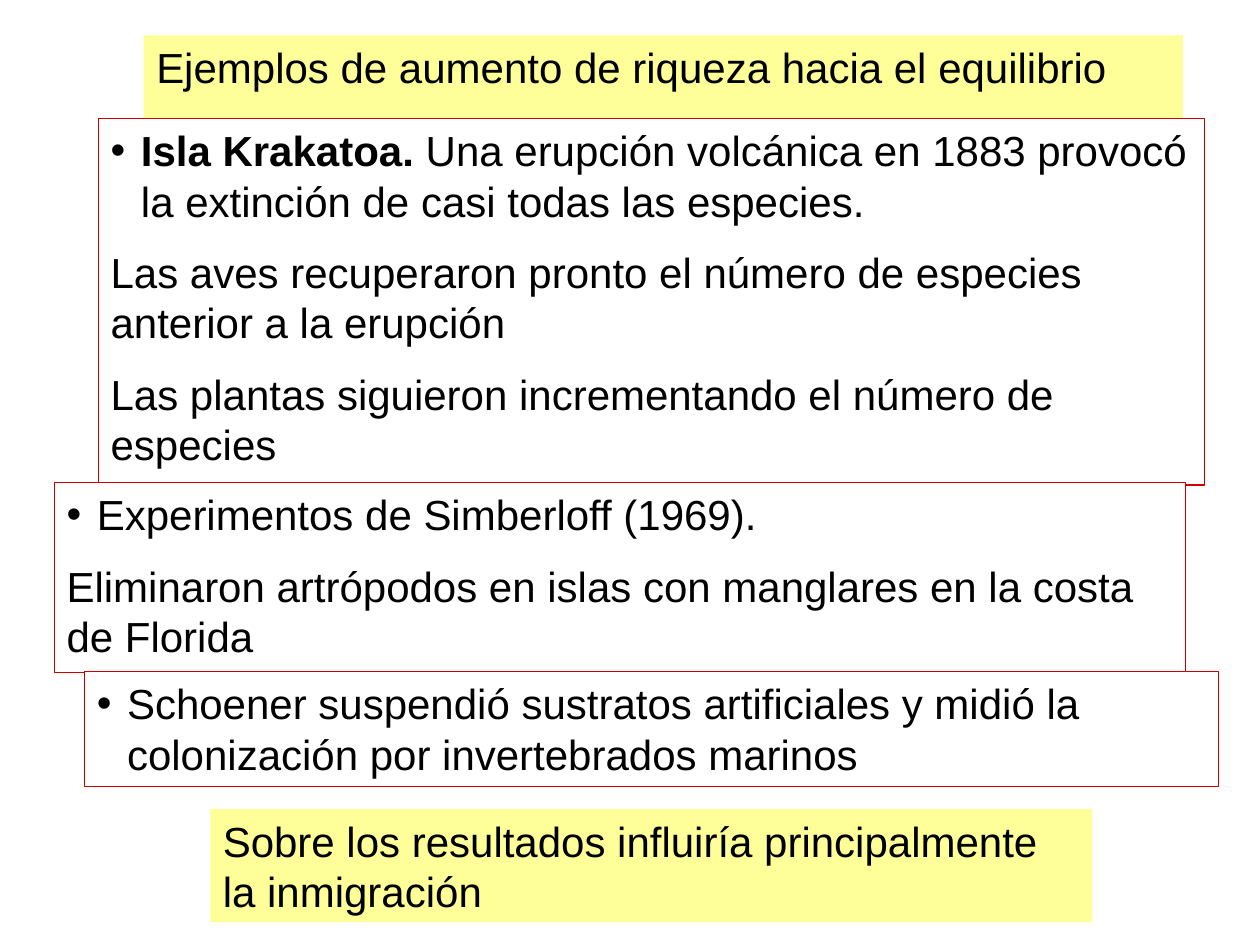
from lxml import etree
from pptx import Presentation
from pptx.dml.color import RGBColor
from pptx.enum.shapes import MSO_SHAPE as SHAPE
from pptx.enum.text import MSO_ANCHOR as ANCHOR, MSO_AUTO_SIZE as AUTO, PP_ALIGN as ALIGN
from pptx.oxml.ns import qn
from pptx.util import Inches, Pt

W, H = 10, 7.5
YELLOW, WHITE, RED, BLACK = "FFFF99", "FFFFFF", "CC0000", "000000"
FONT = {"name": "Arial", "size": Pt(24)}
FRAME = {"word_wrap": True, "auto_size": AUTO.SHAPE_TO_FIT_TEXT,
         "vertical_anchor": ANCHOR.TOP}
BULLET_INDENT = Inches(0.24)


def color(hex_value):
    return RGBColor.from_string(hex_value)


def set_all(obj, values):
    for name, value in values.items():
        setattr(obj, name, value)


def place(sp, box):
    """Position a shape from shares of the slide's size."""
    x, y, w, h = box
    set_all(sp, {"left": Inches(x * W), "top": Inches(y * H),
                 "width": Inches(w * W), "height": Inches(h * H)})


def add_bullet(p):
    pPr = p._p.get_or_add_pPr()
    pPr.set("marL", str(BULLET_INDENT))
    pPr.set("indent", str(-BULLET_INDENT))
    etree.SubElement(pPr, qn("a:buFont")).set("typeface", "Arial")
    etree.SubElement(pPr, qn("a:buChar")).set("char", "•")


def write(sp, paragraphs, bulleted=False):
    """Each paragraph is a list of (text, bold) runs; only the first takes a bullet."""
    tf = sp.text_frame
    set_all(tf, FRAME)
    for i, runs in enumerate(paragraphs):
        p = tf.add_paragraph() if i else tf.paragraphs[0]
        set_all(p, {"alignment": ALIGN.LEFT, "line_spacing": 1.0,
                    "space_before": Pt(12 if i else 0)})
        if bulleted and i == 0:
            add_bullet(p)
        for text, bold in runs:
            r = p.add_run()
            r.text = text
            set_all(r.font, {**FONT, "bold": bold})
            r.font.color.rgb = color(BLACK)


def fill_shape(sp, fill):
    sp.fill.solid()
    sp.fill.fore_color.rgb = color(fill)


def add_title(s, box, text):
    sp = s.shapes.title
    place(sp, box)
    fill_shape(sp, YELLOW)
    write(sp, [[(text, False)]])


def add_box(s, box, fill, paragraphs, line=None, bulleted=False):
    sp = s.shapes.add_shape(SHAPE.RECTANGLE, 0, 0, 0, 0)
    place(sp, box)
    sp.shadow.inherit = False
    fill_shape(sp, fill)
    if line:
        sp.line.color.rgb = color(line)
        sp.line.width = Pt(0.75)
    else:
        sp.line.fill.background()
    write(sp, paragraphs, bulleted)


def add_example(s, box, paragraphs):
    add_box(s, box, WHITE, paragraphs, line=RED, bulleted=True)


def add_conclusion(s, box, text):
    add_box(s, box, YELLOW, [[(text, False)]])


def main():
    prs = Presentation()
    prs.slide_width, prs.slide_height = Inches(W), Inches(H)
    s = prs.slides.add_slide(prs.slide_layouts[5])

    # Heading
    add_title(s, (1.14 / W, 0.28 / H, 8.25 / W, 0.5 / H),
              "Ejemplos de aumento de riqueza hacia el equilibrio")

    # Examples
    add_example(s, (0.78 / W, 0.94 / H, 8.78 / W, 2.91 / H), [
        [("Isla Krakatoa.", True),
         (" Una erupción volcánica en 1883 provocó la extinción de casi todas las especies.", False)],
        [("Las aves recuperaron pronto el número de especies anterior a la erupción", False)],
        [("Las plantas siguieron incrementando el número de especies", False)],
    ])
    add_example(s, (0.43 / W, 3.83 / H, 8.98 / W, 1.51 / H), [
        [("Experimentos de Simberloff (1969).", False)],
        [("Eliminaron artrópodos en islas con manglares en la costa de Florida", False)],
    ])
    add_example(s, (0.67 / W, 5.33 / H, 9 / W, 0.91 / H), [
        [("Schoener suspendió sustratos artificiales y midió la colonización "
          "por invertebrados marinos", False)],
    ])

    # Conclusion
    add_conclusion(s, (1.67 / W, 6.42 / H, 7 / W, 0.9 / H),
                   "Sobre los resultados influiría principalmente la inmigración")

    prs.save("out.pptx")


if __name__ == "__main__":
    main()
